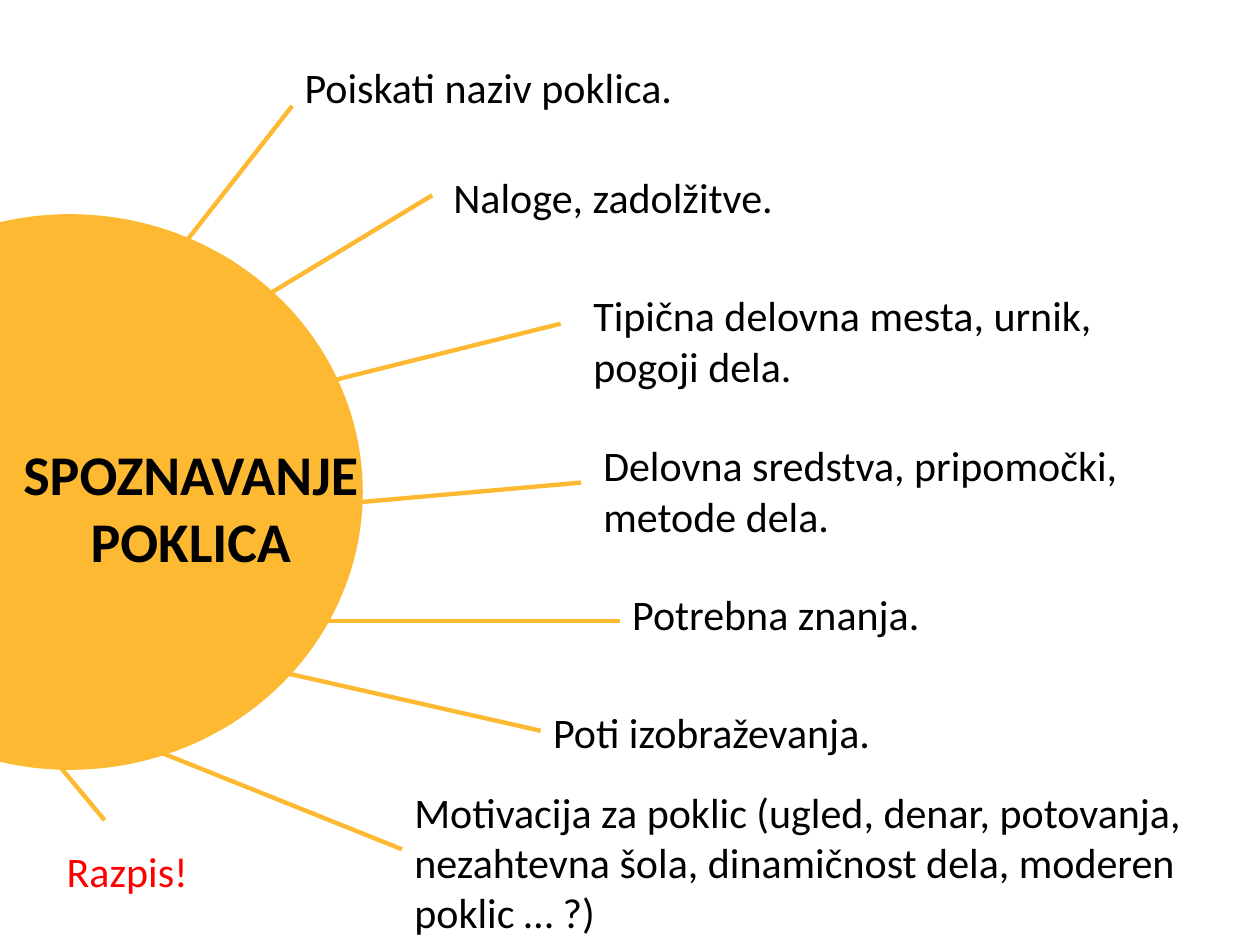
from lxml.etree import SubElement as Sub
from pptx import Presentation as Deck
from pptx.dml.color import RGBColor as Rgb
from pptx.enum.shapes import MSO_CONNECTOR as Conn, MSO_SHAPE as Form
from pptx.enum.text import MSO_AUTO_SIZE as Auto, PP_ALIGN as Align
from pptx.oxml.ns import qn
from pptx.util import Pt

SUN = "FDB931"
BLACK = "000000"
RED = "FF0000"

RAYS = [
    (105, 139.7, 167, 60.5),
    (144.7, 173.5, 247, 111.6),
    (87.8, 428.4, 229.7, 485.3),
    (184.3, 355, 354.2, 355),
    (161.3, 224.6, 320.4, 185),
    (201.6, 287.3, 332, 275.8),
    (156.2, 383, 309, 417.6),
    (31, 434.2, 59.8, 468.7),
]

TOPICS = [
    (167, 31.7, "Poiskati naziv poklica."),
    (252, 94.3, "Naloge, zadolžitve."),
    (354.2, 332.6, "Potrebna znanja."),
    (337.7, 247.7, "Delovna sredstva, pripomočki,\nmetode dela."),
    (332, 162, "Tipična delovna mesta, urnik,\npogoji dela."),
    (309, 400.3, "Poti izobraževanja."),
]

REASON = ("Motivacija za poklic (ugled, denar, potovanja, nezahtevna šola, "
          "dinamičnost dela, moderen poklic … ?)")


def color(code):
    return Rgb.from_string(code)


def add_disc(slide, x, y, w, h, fill):
    disc = slide.shapes.add_shape(Form.OVAL, Pt(x), Pt(y), Pt(w), Pt(h))
    disc.shadow.inherit = False
    disc.fill.solid()
    disc.fill.fore_color.rgb = color(fill)
    disc.line.fill.background()


def add_ray(slide, x1, y1, x2, y2, ink=SUN, width=2.5):
    ray = slide.shapes.add_connector(
        Conn.STRAIGHT, Pt(x1), Pt(y1), Pt(x2), Pt(y2))
    ray.line.color.rgb = color(ink)
    ray.line.width = Pt(width)
    Sub(ray._element.spPr, qn("a:effectLst"))


def add_text(slide, text, x, y, w=453.6, rows=1, size=24, ink=BLACK,
             bold=False, align=Align.LEFT):
    high = 7.2 + rows * size * 1.21
    box = slide.shapes.add_textbox(Pt(x), Pt(y), Pt(w), Pt(high))
    frame = box.text_frame
    frame.word_wrap = True
    frame.auto_size = Auto.SHAPE_TO_FIT_TEXT
    frame.text = text
    for para in frame.paragraphs:
        para.alignment = align
        for run in para.runs:
            font = run.font
            font.name = "Calibri"
            font.size = Pt(size)
            font.bold = bold
            font.color.rgb = color(ink)


def main():
    deck = Deck()
    deck.slide_width, deck.slide_height = Pt(720), Pt(540)
    slide = deck.slides.add_slide(deck.slide_layouts[6])

    add_disc(slide, -127.5, 122.4, 334.8, 317.5, SUN)
    add_text(slide, "SPOZNAVANJE POKLICA", 0, 247.7, w=218.2, rows=2,
             size=32, bold=True, align=Align.CENTER)
    for ray in RAYS:
        add_ray(slide, *ray)
    for x, y, text in TOPICS:
        add_text(slide, text, x, y, rows=text.count("\n") + 1)
    add_text(slide, REASON, 229.7, 445.7, w=490.3, rows=3)
    add_text(slide, "Razpis!", 31, 479.5, w=108, ink=RED)

    deck.save("out.pptx")


if __name__ == "__main__":
    main()
